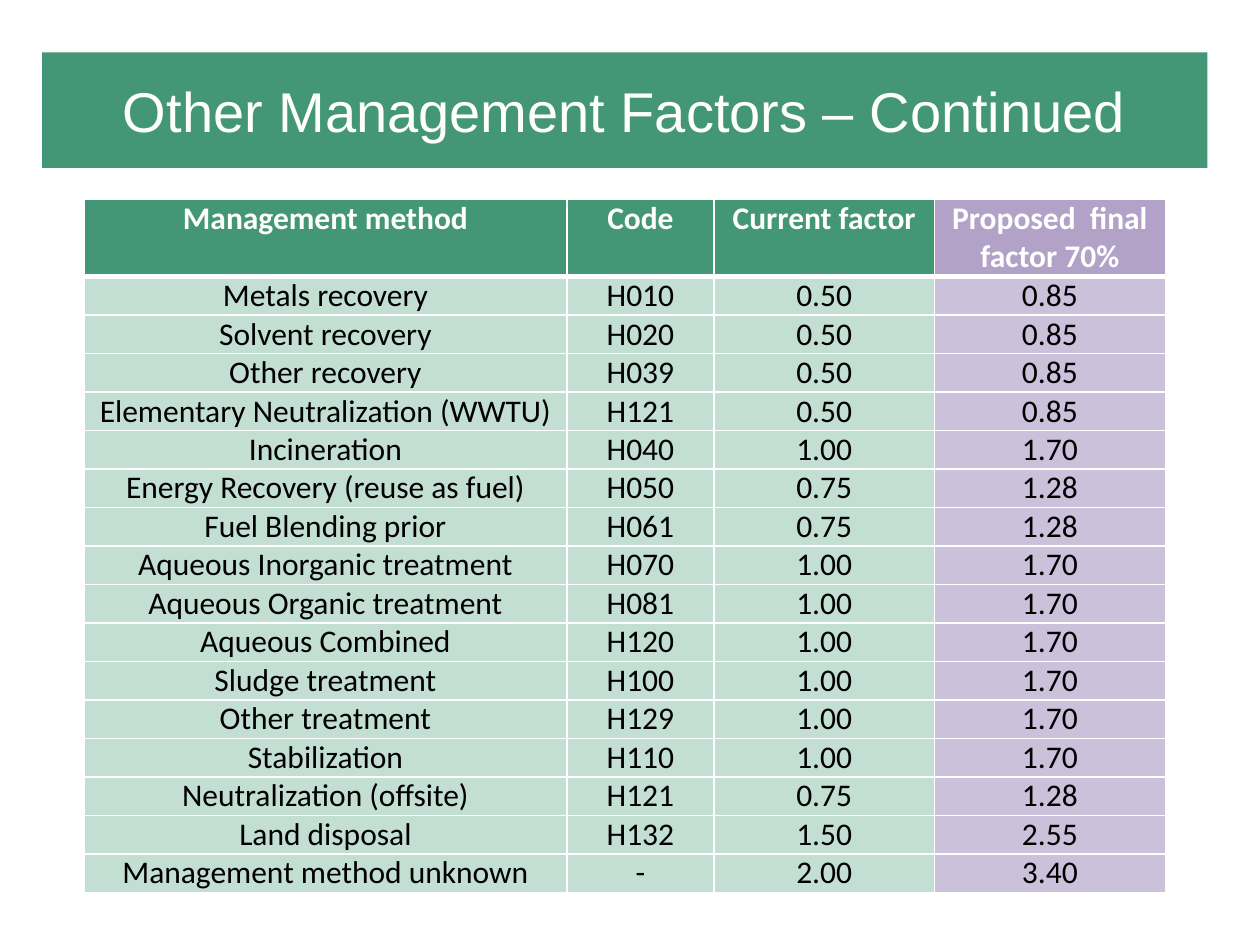
from dataclasses import dataclass

from lxml import etree
from pptx import Presentation
from pptx import util as u
from pptx.dml.color import RGBColor
from pptx.enum import text
from pptx.oxml import ns

GREEN, PALE_GREEN = "439777", "C3DED3"
PURPLE, PALE_PURPLE = "B3A2C7", "CCC1DA"
WHITE, BLACK = "FFFFFF", "000000"
HEADER_HEIGHT, ROW_HEIGHT = 44, 22


@dataclass
class Column:
    heading: str
    width: float
    head_fill: str = GREEN
    body_fill: str = PALE_GREEN


@dataclass
class Factor:
    method: str
    code: str
    current: str
    proposed: str


COLUMNS = [
    Column("Management method", 276),
    Column("Code", 84),
    Column("Current factor", 126),
    Column("Proposed  final factor 70%", 132, PURPLE, PALE_PURPLE),
]

FACTORS = [
    Factor("Metals recovery", "H010", "0.50", "0.85"),
    Factor("Solvent recovery", "H020", "0.50", "0.85"),
    Factor("Other recovery", "H039", "0.50", "0.85"),
    Factor("Elementary Neutralization (WWTU)", "H121", "0.50", "0.85"),
    Factor("Incineration", "H040", "1.00", "1.70"),
    Factor("Energy Recovery (reuse as fuel)", "H050", "0.75", "1.28"),
    Factor("Fuel Blending prior", "H061", "0.75", "1.28"),
    Factor("Aqueous Inorganic treatment", "H070", "1.00", "1.70"),
    Factor("Aqueous Organic treatment", "H081", "1.00", "1.70"),
    Factor("Aqueous Combined", "H120", "1.00", "1.70"),
    Factor("Sludge treatment", "H100", "1.00", "1.70"),
    Factor("Other treatment", "H129", "1.00", "1.70"),
    Factor("Stabilization", "H110", "1.00", "1.70"),
    Factor("Neutralization (offsite)", "H121", "0.75", "1.28"),
    Factor("Land disposal", "H132", "1.50", "2.55"),
    Factor("Management method unknown", "-", "2.00", "3.40"),
]


def rgb(color: str) -> RGBColor:
    return RGBColor.from_string(color)


def set_fill(item, color: str) -> None:
    item.fill.solid()
    item.fill.fore_color.rgb = rgb(color)


def set_text(tf, words: str, font: str, size: float, color: str, bold: bool = False) -> None:
    tf.text = words
    p = tf.paragraphs[0]
    p.alignment = text.PP_ALIGN.CENTER
    f = p.runs[0].font
    f.name, f.size, f.bold = font, u.Pt(size), bold
    f.color.rgb = rgb(color)


def set_borders(cell, top: float, bottom: float) -> None:
    """Draw white lines on all four sides, widths in points."""
    tc_pr = cell._tc.get_or_add_tcPr()
    sides = {"lnL": 1, "lnR": 1, "lnT": top, "lnB": bottom}
    for i, (side, width) in enumerate(sides.items()):
        ln = etree.Element(ns.qn(f"a:{side}"), w=str(u.Pt(width)))
        fill = etree.SubElement(ln, ns.qn("a:solidFill"))
        etree.SubElement(fill, ns.qn("a:srgbClr"), val=WHITE)
        tc_pr.insert(i, ln)  # lines come before the cell fill


def add_title(s, words: str) -> None:
    sp = s.shapes.title
    sp.left, sp.top, sp.width, sp.height = map(u.Pt, (24, 30, 666, 66))
    set_fill(sp, GREEN)
    sp.text_frame.vertical_anchor = text.MSO_ANCHOR.MIDDLE
    set_text(sp.text_frame, words, "Arial", 32, WHITE)


def add_factor_table(s, columns: list[Column], factors: list[Factor]) -> None:
    width = sum(c.width for c in columns)
    height = HEADER_HEIGHT + ROW_HEIGHT * len(factors)
    table = s.shapes.add_table(
        len(factors) + 1, len(columns), u.Pt(48), u.Pt(114), u.Pt(width), u.Pt(height)
    ).table
    rows = [[c.heading for c in columns]]
    rows += [[f.method, f.code, f.current, f.proposed] for f in factors]

    for i, column in enumerate(columns):
        table.columns[i].width = u.Pt(column.width)
    for r, row in enumerate(rows):
        head = r == 0
        table.rows[r].height = u.Pt(HEADER_HEIGHT if head else ROW_HEIGHT)
        for i, (column, words) in enumerate(zip(columns, row)):
            cell = table.cell(r, i)
            cell.margin_left = cell.margin_right = u.Pt(5)
            cell.margin_top = cell.margin_bottom = 0
            set_fill(cell, column.head_fill if head else column.body_fill)
            set_text(cell.text_frame, words, "Calibri", 18, WHITE if head else BLACK, head)
            set_borders(cell, top=3 if r == 1 else 1, bottom=3 if head else 1)


def main() -> None:
    prs = Presentation()
    prs.slide_width, prs.slide_height = u.Pt(720), u.Pt(540)
    s = prs.slides.add_slide(prs.slide_layouts[5])  # title only

    # Title band
    add_title(s, "Other Management Factors – Continued")

    # Factors by management method
    add_factor_table(s, COLUMNS, FACTORS)

    prs.save("out.pptx")


if __name__ == "__main__":
    main()
